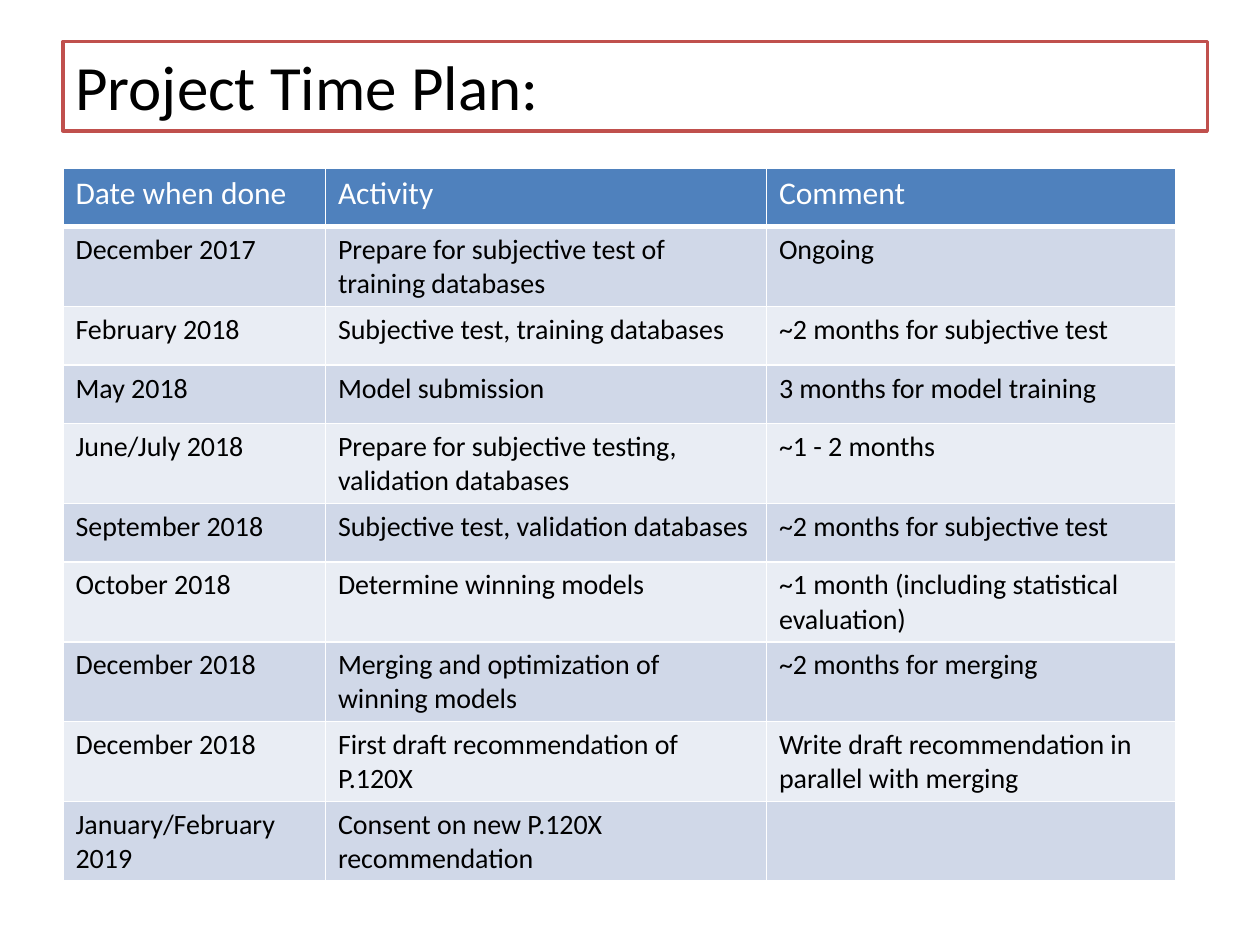
from pptx import Presentation
from pptx.dml.color import RGBColor
from pptx.enum.shapes import MSO_SHAPE as Shape
from pptx.enum.text import MSO_ANCHOR as Anchor, MSO_AUTO_SIZE as Fit, PP_ALIGN as Align
from pptx.oxml import parse_xml
from pptx.oxml.ns import nsdecls
from pptx.util import Cm, Pt

# Content
HEAD = ("Date when done", "Activity", "Comment")
PLAN = [
    ("December 2017", "Prepare for subjective test of training databases", "Ongoing"),
    ("February 2018", "Subjective test, training databases", "~2 months for subjective test"),
    ("May 2018", "Model submission", "3 months for model training"),
    ("June/July 2018", "Prepare for subjective testing, validation databases", "~1 - 2 months"),
    ("September 2018", "Subjective test, validation databases", "~2 months for subjective test"),
    ("October 2018", "Determine winning models", "~1 month (including statistical evaluation)"),
    ("December 2018", "Merging and optimization of winning models", "~2 months for merging"),
    ("December 2018", "First draft recommendation of P.120X",
     "Write draft recommendation in parallel with merging"),
    ("January/February 2019", "Consent on new P.120X recommendation", ""),
]


def paint(code):
    return RGBColor.from_string(code)


class Deck:
    font = "Calibri"
    ink, paper = "000000", "FFFFFF"
    edge, head = "C0504D", "4F81BD"
    bands = ("D0D8E8", "E9EDF4")

    def __init__(self, slide):
        self.slide = slide

    def add_text(self, para, text, size, color):
        run = para.add_run()
        run.text = text
        run.font.name = self.font
        run.font.size = Pt(size)
        run.font.color.rgb = paint(color)

    def title(self, text, left, top, width, height):
        box = self.slide.shapes.add_shape(
            Shape.RECTANGLE, Cm(left), Cm(top), Cm(width), Cm(height))
        box.shadow.inherit = False
        box.fill.solid()
        box.fill.fore_color.rgb = paint(self.paper)
        box.line.color.rgb = paint(self.edge)
        box.line.width = Pt(2)
        frame = box.text_frame
        frame.word_wrap = True
        frame.auto_size = Fit.SHAPE_TO_FIT_TEXT
        frame.vertical_anchor = Anchor.TOP
        para = frame.paragraphs[0]
        para.alignment = Align.LEFT
        self.add_text(para, text, 36, self.ink)

    def rule(self, cell, base):
        props = cell._tc.get_or_add_tcPr()
        for spot, side in enumerate("LRTB"):
            width = Pt(base if side == "B" else 1)
            props.insert(spot, parse_xml(
                f'<a:ln{side} {nsdecls("a")} w="{width}"><a:solidFill>'
                f'<a:srgbClr val="{self.paper}"/></a:solidFill></a:ln{side}>'))

    def cell(self, cell, text, size, color, fill, base):
        cell.fill.solid()
        cell.fill.fore_color.rgb = paint(fill)
        self.rule(cell, base)
        para = cell.text_frame.paragraphs[0]
        if text:
            self.add_text(para, text, size, color)
        else:
            para.font.size = Pt(size)

    def table(self, head, rows, left, top, widths, height):
        lines = [head, *rows]
        grid = self.slide.shapes.add_table(
            len(lines), len(head), Cm(left), Cm(top),
            Cm(sum(widths)), Cm(height * len(lines))).table
        for col, width in zip(grid.columns, widths):
            col.width = Cm(width)
        for i, line in enumerate(lines):
            grid.rows[i].height = Cm(height)
            if i == 0:
                style = (18, self.paper, self.head, 3)
            else:
                style = (16, self.ink, self.bands[(i - 1) % 2], 1)
            for j, text in enumerate(line):
                self.cell(grid.cell(i, j), text, *style)


def main():
    show = Presentation()
    show.slide_width, show.slide_height = Cm(25.4), Cm(19.05)
    deck = Deck(show.slides.add_slide(show.slide_layouts[6]))

    # Title bar
    deck.title("Project Time Plan:", 1.27, 0.84, 23.07, 1.8)

    # Time plan
    deck.table(HEAD, PLAN, 1.27, 3.39, (5.29, 8.89, 8.26), 1.18)

    show.save("out.pptx")


if __name__ == "__main__":
    main()
